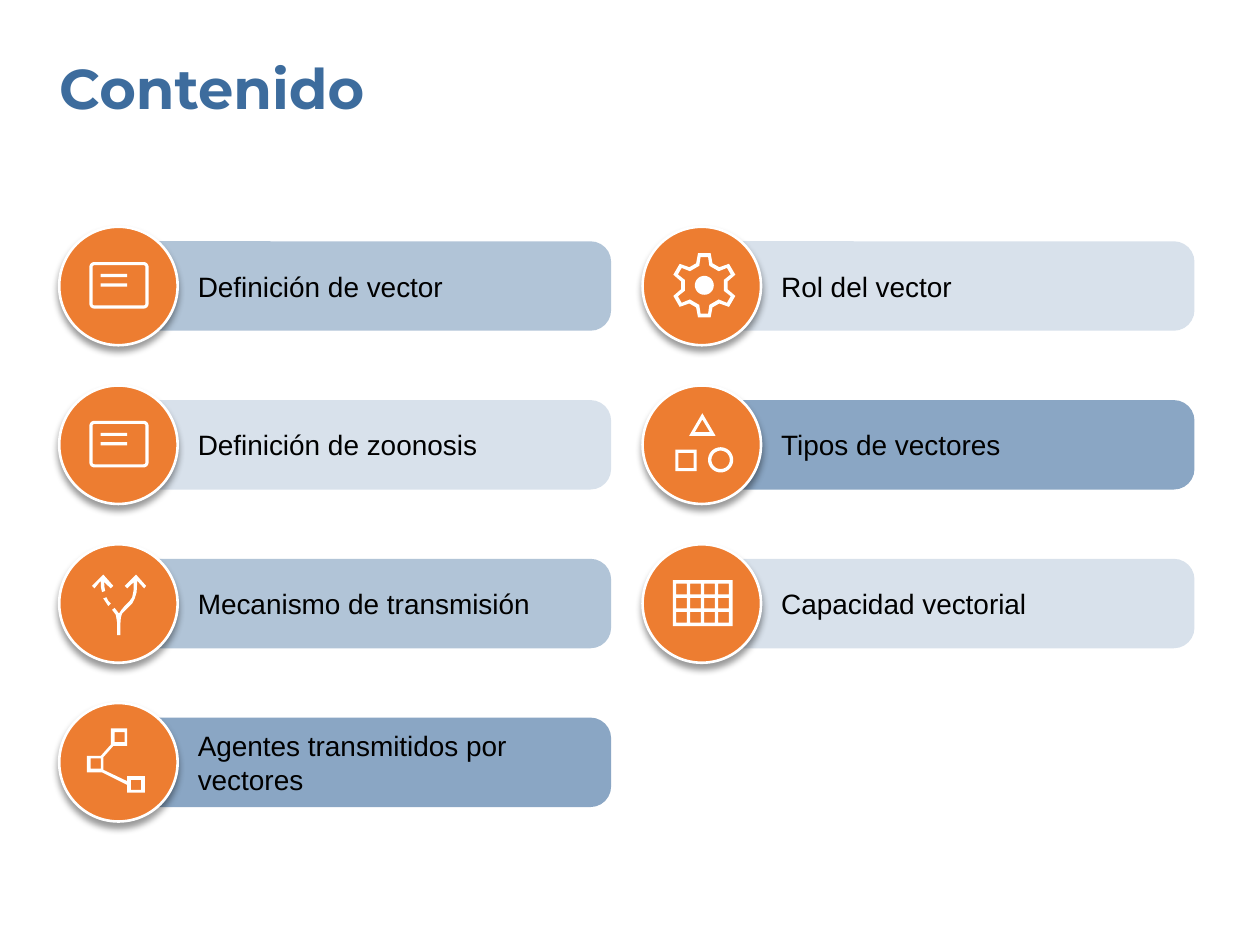
import math

import pptx
import pptx.dml.color
import pptx.enum.shapes
import pptx.enum.text
import pptx.oxml
import pptx.oxml.ns
import pptx.util

Pt = pptx.util.Pt
RGBColor = pptx.dml.color.RGBColor
SHAPE = pptx.enum.shapes.MSO_SHAPE
ANCHOR = pptx.enum.text.MSO_ANCHOR

BLUE = RGBColor(0x3D, 0x6C, 0x9D)
ORANGE = RGBColor(0xED, 0x7D, 0x31)
WHITE = RGBColor(0xFF, 0xFF, 0xFF)
BLACK = RGBColor(0, 0, 0)

LEFT, FIRST_ROW = 33.84, 129.6
COLUMN_STEP, ROW_STEP = 333.36, 90.72
DISC = 67.68
BAR_WIDTH, BAR_HEIGHT = 281.5, 51.1
LABEL_OFFSET, LABEL_WIDTH, LINE_HEIGHT = 79.2, 216, 19.44
ICON_UNIT = 0.72  # points per step of the icon grid


# Icons are lists of closed contours on a 94 x 94 grid that covers the disc.
def box(left, top, right, bottom):
    return [(left, top), (right, top), (right, bottom), (left, bottom)]


def arc(x, y, radius, start=0, sweep=360, steps=36):
    angles = [math.radians(start + sweep * i / steps) for i in range(steps + 1)]
    return [(x + radius * math.cos(a), y + radius * math.sin(a)) for a in angles]


def rounded_box(left, top, right, bottom, radius):
    corners = [(right - radius, bottom - radius), (left + radius, bottom - radius),
               (left + radius, top + radius), (right - radius, top + radius)]
    return [point for i, (x, y) in enumerate(corners)
            for point in arc(x, y, radius, 90 * i, 90, 6)]


def gear_outline(tooth, x=49, y=46.5):
    """Repeat the points of the top tooth six times around the hub."""
    outline = []
    for i in range(6):
        c, s = math.cos(i * math.pi / 3), math.sin(i * math.pi / 3)
        outline += [(x + dx * c - dy * s, y + dx * s + dy * c) for dx, dy in tooth]
    return outline


CARD = [rounded_box(24, 28, 71, 65, 4), rounded_box(26.5, 30.5, 68.5, 62.5, 1.5),
        box(33, 45, 54, 47.5), box(33, 37.5, 54, 40)]
GEAR = [gear_outline([(-6.5, -17.5), (-5, -25.5), (5, -25.5), (6.5, -17.5)]),
        gear_outline([(-4, -15.5), (-3, -22.5), (3, -22.5), (4, -15.5)]),
        arc(49, 46.5, 7.5)]
FIGURES = [[(37, 40), (47.5, 22), (58, 40)], [(41.5, 37), (53.5, 37), (47.5, 27)],
           box(26, 51, 43, 68), box(28.5, 53.5, 40.5, 65.5),
           arc(62, 59, 10), arc(62, 59, 7.3)]
GRID = [box(24, 28.5, 71.5, 65)] + [
    box(x, y, x + 8.5, y + 8.5)
    for x in (26.7, 37.8, 48.9, 60) for y in (31.2, 42.4, 53.7)]
NODES = [[(54, 71), (54, 65), (34, 55), (22, 55), (22, 42), (33, 42), (41, 33),
          (41, 20), (54, 20), (54, 34), (43, 34), (35, 43), (35, 53), (54, 62),
          (54, 58), (68, 58), (68, 71)],
         box(44, 23, 52, 31), box(25, 44, 33, 52), box(57, 61, 65, 69)]
FORK = [[(46, 72), (46, 62), (45, 56), (42, 52), (44, 50.5), (46, 53), (47.5, 55),
         (49.5, 52), (52, 49), (56, 45), (58, 42), (59, 37), (59.2, 30), (54, 35),
         (52, 33), (61, 24), (69, 33), (67.5, 35), (62, 29), (61.5, 38), (60, 43),
         (58, 47), (54, 51), (50, 55), (49, 58), (48.7, 62), (48.7, 72)],
        [(34, 38), (33.2, 34), (33, 29), (28, 35), (26, 33), (35, 24), (43, 33),
         (41, 35), (35.7, 30), (36, 34), (36.5, 37)],
        [(39, 49), (37, 46), (35, 43), (37.5, 42), (39, 45), (41, 47)]]

# Label, number of lines, bar opacity in percent, icon
COLUMNS = [
    [("Definición de vector", 1, 40, CARD),
     ("Definición de zoonosis", 1, 20, CARD),
     ("Mecanismo de transmisión", 1, 40, FORK),
     ("Agentes transmitidos por vectores", 2, 60, NODES)],
    [("Rol del vector", 1, 20, GEAR),
     ("Tipos de vectores", 1, 60, FIGURES),
     ("Capacidad vectorial", 1, 20, GRID)],
]


def write(frame, text, *, font="Arial", size=16, color=BLACK, bold=False):
    run = frame.paragraphs[0].add_run()
    run.text = text
    run.font.name, run.font.size, run.font.bold = font, Pt(size), bold
    run.font.color.rgb = color


def add_xml(parent, tag, children="", **attributes):
    values = " ".join(f'{key}="{value}"' for key, value in attributes.items())
    parent.append(pptx.oxml.parse_xml(
        f'<a:{tag} {pptx.oxml.ns.nsdecls("a")} {values}>{children}</a:{tag}>'))


class Painter:
    def __init__(self, slide):
        self.slide = slide

    def paint(self, shape, color):
        shape.fill.solid()
        shape.fill.fore_color.rgb = color
        shape.line.fill.background()
        shape.shadow.inherit = False

    def text(self, left, top, width, height, text, **style):
        frame = self.slide.shapes.add_textbox(
            Pt(left), Pt(top), Pt(width), Pt(height)).text_frame
        frame.margin_left = frame.margin_top = 0
        frame.margin_right = frame.margin_bottom = 0
        frame.word_wrap = True
        frame.vertical_anchor = ANCHOR.MIDDLE
        write(frame, text, **style)

    def bar(self, left, top, opacity):
        bar = self.slide.shapes.add_shape(
            SHAPE.ROUNDED_RECTANGLE, Pt(left), Pt(top), Pt(BAR_WIDTH), Pt(BAR_HEIGHT))
        bar.adjustments[0] = 0.23
        self.paint(bar, BLUE)
        color = bar.element.spPr.find(".//" + pptx.oxml.ns.qn("a:srgbClr"))
        add_xml(color, "alpha", val=opacity * 1000)

    def disc(self, left, top):
        disc = self.slide.shapes.add_shape(
            SHAPE.OVAL, Pt(left), Pt(top), Pt(DISC), Pt(DISC))
        self.paint(disc, ORANGE)
        disc.line.color.rgb = WHITE
        disc.line.width = Pt(1.5)
        effects = disc.element.spPr.find(pptx.oxml.ns.qn("a:effectLst"))
        add_xml(effects, "outerShdw",
                '<a:srgbClr val="000000"><a:alpha val="40000"/></a:srgbClr>',
                blurRad=Pt(4), dist=Pt(3), dir=90 * 60000, rotWithShape=0)

    def icon(self, left, top, contours):
        unit = Pt(ICON_UNIT)
        scaled = [[(x * unit, y * unit) for x, y in contour] for contour in contours]
        builder = self.slide.shapes.build_freeform(*scaled[0][0])
        for i, contour in enumerate(scaled):
            if i:
                builder.move_to(*contour[0])
            builder.add_line_segments(contour[1:], close=True)
        self.paint(builder.convert_to_shape(Pt(left), Pt(top)), WHITE)

    def topic(self, left, top, label, lines, opacity, icon):
        middle = top + DISC / 2
        self.bar(left + DISC / 2, middle - BAR_HEIGHT / 2, opacity)
        height = lines * LINE_HEIGHT
        self.text(left + LABEL_OFFSET, middle - height / 2, LABEL_WIDTH, height, label)
        self.disc(left, top)
        self.icon(left, top, icon)


def main():
    deck = pptx.Presentation()
    deck.slide_width, deck.slide_height = Pt(720), Pt(540)
    painter = Painter(deck.slides.add_slide(deck.slide_layouts[6]))
    painter.text(LEFT, 30.24, 615.6, 38.88, "Contenido",
                 font="Montserrat", size=32, color=BLUE, bold=True)
    for column, topics in enumerate(COLUMNS):
        for row, topic in enumerate(topics):
            painter.topic(LEFT + column * COLUMN_STEP, FIRST_ROW + row * ROW_STEP, *topic)
    deck.save("out.pptx")


if __name__ == "__main__":
    main()
